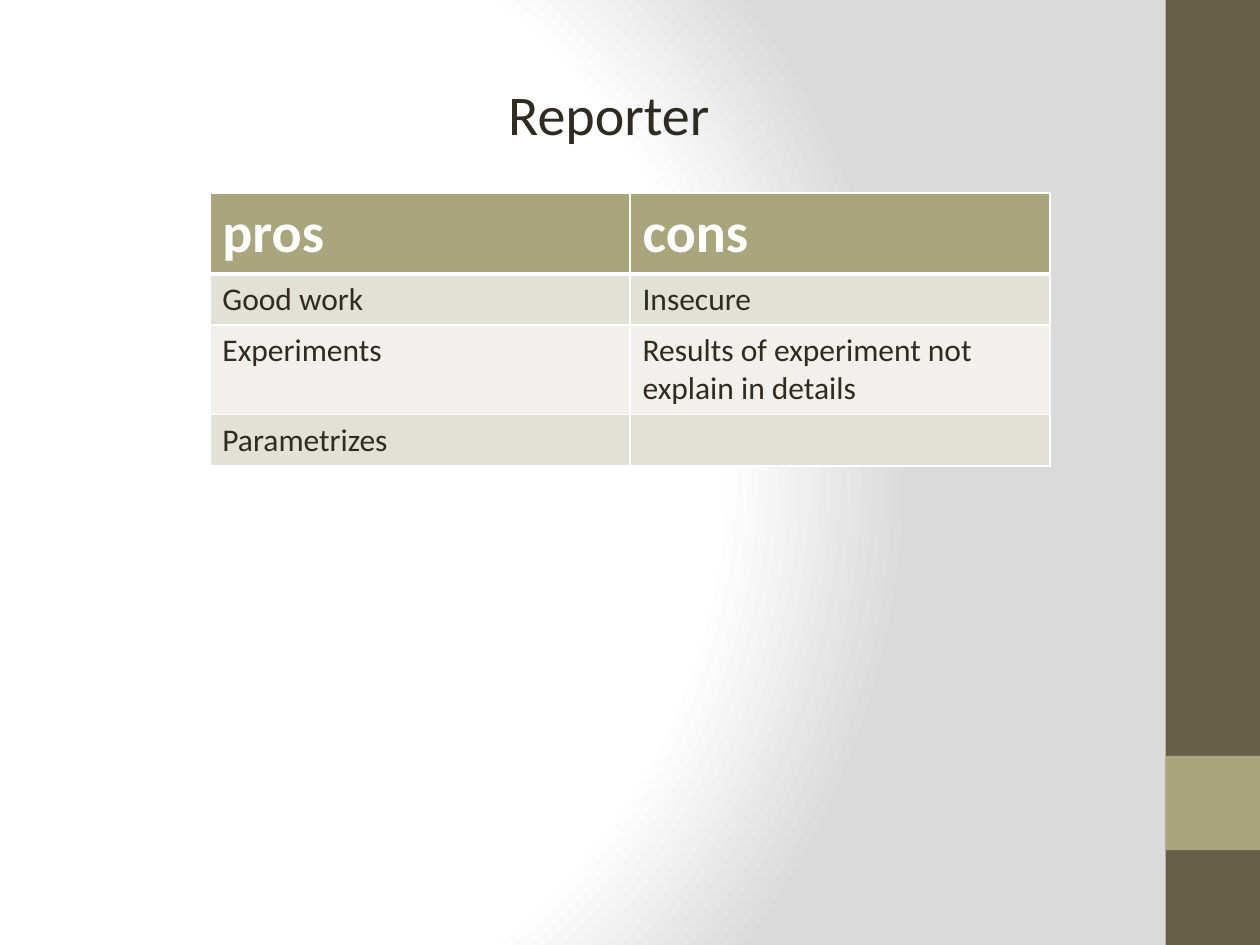
from pptx import Presentation
from pptx.dml.color import RGBColor
from pptx.enum.shapes import MSO_SHAPE
from pptx.enum.text import MSO_AUTO_SIZE, PP_ALIGN
from pptx.oxml import parse_xml
from pptx.oxml.ns import nsdecls
from pptx.util import Cm, Pt

RECTANGLE = MSO_SHAPE.RECTANGLE
CENTER = PP_ALIGN.CENTER
LEFT = PP_ALIGN.LEFT
FIT_SHAPE = MSO_AUTO_SIZE.SHAPE_TO_FIT_TEXT

FONT = "Calibri"
WHITE = RGBColor(0xFF, 0xFF, 0xFF)
GREY = RGBColor(0xDA, 0xDA, 0xDA)
INK = RGBColor(0x2F, 0x2B, 0x20)
BROWN = RGBColor(0x67, 0x5E, 0x47)
OLIVE = RGBColor(0xA9, 0xA5, 0x7C)
BAND_DARK = RGBColor(0xE2, 0xE1, 0xD7)
BAND_LIGHT = RGBColor(0xF1, 0xF0, 0xEC)

SLIDE_WIDTH, SLIDE_HEIGHT = Cm(25.4), Cm(19.05)
BAR_WIDTH = Cm(1.9)
COLUMN_WIDTH, ROW_HEIGHT = Cm(8.47), Cm(1.03)

ROWS = [
    ("pros", "cons"),
    ("Good work", "Insecure"),
    ("Experiments", "Results of experiment not explain in details"),
    ("Parametrizes", ""),
]


def set_background(slide):
    """Radial gradient centred left of the middle of the slide."""
    stops = "".join(
        f'<a:gs pos="{percent * 1000}"><a:srgbClr val="{color}"/></a:gs>'
        for percent, color in ((0, WHITE), (75, WHITE), (100, GREY))
    )
    background = parse_xml(
        f'<p:bg {nsdecls("p", "a")}><p:bgPr><a:gradFill rotWithShape="1">'
        f'<a:gsLst>{stops}</a:gsLst><a:path path="circle">'
        '<a:fillToRect l="20000" t="50000" r="100000" b="50000"/></a:path>'
        "</a:gradFill><a:effectLst/></p:bgPr></p:bg>"
    )
    slide.element.cSld.insert(0, background)


def add_block(slide, top, height, color):
    """Plain rectangle along the right edge."""
    shape = slide.shapes.add_shape(
        RECTANGLE, SLIDE_WIDTH - BAR_WIDTH, top, BAR_WIDTH, height
    )
    shape.shadow.inherit = False
    shape.fill.solid()
    shape.fill.fore_color.rgb = color
    shape.line.fill.background()


def write_text(text_frame, text, size=18, color=INK, bold=False, align=LEFT):
    paragraph = text_frame.paragraphs[0]
    paragraph.alignment = align
    run = paragraph.add_run()
    run.text = text
    run.font.name = FONT
    run.font.size = Pt(size)
    run.font.bold = bold
    run.font.color.rgb = color


def set_borders(cell, bottom_width):
    """White lines on all four sides, placed ahead of the cell fill."""
    properties = cell._tc.get_or_add_tcPr()
    widths = {"lnL": 1, "lnR": 1, "lnT": 1, "lnB": bottom_width}
    for position, (side, width) in enumerate(widths.items()):
        properties.insert(position, parse_xml(
            f'<a:{side} {nsdecls("a")} w="{Pt(width)}"><a:solidFill>'
            f'<a:srgbClr val="{WHITE}"/></a:solidFill></a:{side}>'
        ))


def add_comparison_table(slide, left, top):
    columns = len(ROWS[0])
    table = slide.shapes.add_table(
        len(ROWS), columns, left, top,
        COLUMN_WIDTH * columns, ROW_HEIGHT * len(ROWS),
    ).table
    for row_index, texts in enumerate(ROWS):
        header = row_index == 0
        band = BAND_DARK if row_index % 2 else BAND_LIGHT
        for column_index, text in enumerate(texts):
            cell = table.cell(row_index, column_index)
            cell.fill.solid()
            cell.fill.fore_color.rgb = OLIVE if header else band
            set_borders(cell, bottom_width=3 if header else 1)
            if header:
                write_text(cell.text_frame, text, size=32, color=WHITE, bold=True)
            elif text:
                write_text(cell.text_frame, text)


def add_title(slide, text):
    box = slide.shapes.add_textbox(Cm(2.75), Cm(1.48), Cm(19.05), Cm(1.62))
    box.text_frame.word_wrap = True
    box.text_frame.auto_size = FIT_SHAPE
    write_text(box.text_frame, text, size=32, align=CENTER)


def main():
    presentation = Presentation()
    presentation.slide_width = SLIDE_WIDTH
    presentation.slide_height = SLIDE_HEIGHT
    slide = presentation.slides.add_slide(presentation.slide_layouts[6])

    # Background and side bar
    set_background(slide)
    add_block(slide, 0, SLIDE_HEIGHT, BROWN)
    add_block(slide, Cm(15.24), BAR_WIDTH, OLIVE)

    # Content
    add_comparison_table(slide, Cm(4.23), Cm(3.89))
    add_title(slide, "Reporter")

    presentation.save("out.pptx")


if __name__ == "__main__":
    main()
